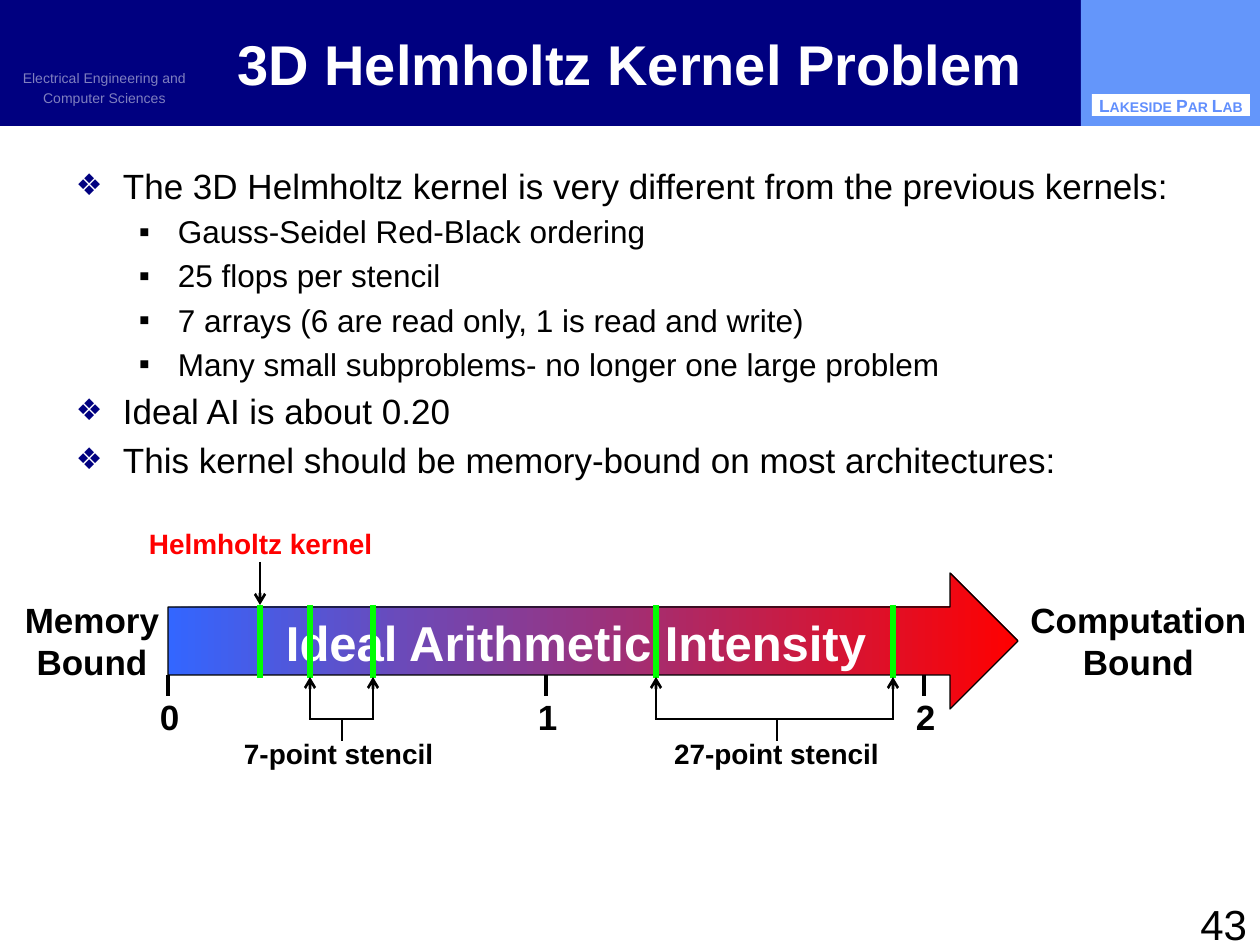
from lxml.etree import SubElement
from pptx import Presentation
from pptx.dml.color import RGBColor
from pptx.enum.shapes import MSO_CONNECTOR, MSO_SHAPE
from pptx.enum.text import MSO_ANCHOR, PP_ALIGN
from pptx.oxml.ns import qn
from pptx.util import Emu, Pt

PX = 914400 / 126
BLACK = RGBColor(0, 0, 0)
WHITE = RGBColor(255, 255, 255)
NAVY = RGBColor(0, 0, 128)
PANEL_BLUE = RGBColor(0x64, 0x96, 0xFA)
LABEL_BLUE = RGBColor(0x61, 0x8F, 0xFD)
ARROW_BLUE = RGBColor(0x33, 0x66, 0xFF)
RED = RGBColor(255, 0, 0)
GREEN = RGBColor(0, 255, 0)
LEFT, CENTER, RIGHT = PP_ALIGN.LEFT, PP_ALIGN.CENTER, PP_ALIGN.RIGHT

prs = Presentation()
prs.slide_width, prs.slide_height = Emu(round(1260 * PX)), Emu(round(945 * PX))
s = prs.slides.add_slide(prs.slide_layouts[6])


def add_text(target, paragraphs, size, color=BLACK, bold=False, align=LEFT,
             anchor=MSO_ANCHOR.TOP, margins=(13, 6), wrap=False, spacing=None, alpha=None):
    """Fill a shape, or a new text box at (x, y, w, h); a paragraph is a list of (text, size, color)
    runs, or a plain string."""
    if isinstance(target, tuple):
        target = s.shapes.add_textbox(*[round(v * PX) for v in target])
    tf = target.text_frame
    tf.word_wrap, tf.vertical_anchor = wrap, anchor
    tf.margin_left = tf.margin_right = round(margins[0] * PX)
    tf.margin_top = tf.margin_bottom = round(margins[1] * PX)
    for i, runs in enumerate(paragraphs):
        p = tf.add_paragraph() if i else tf.paragraphs[0]
        p.alignment, p.line_spacing = align, spacing
        for text, run_size, run_color in [(runs, size, color)] if isinstance(runs, str) else runs:
            r = p.add_run()
            r.text = text
            r.font.name, r.font.size, r.font.bold = "Arial", Pt(run_size), bold
            r.font.color.rgb = run_color
            if alpha:
                rgb = r._r.rPr.find(qn("a:solidFill"))[0]
                SubElement(rgb, qn("a:alpha"), val=str(alpha * 1000))
    return tf


def add_line(x1, y1, x2, y2, color=BLACK, width=1.5, arrow=False):
    c = s.shapes.add_connector(MSO_CONNECTOR.STRAIGHT, *[round(v * PX) for v in (x1, y1, x2, y2)])
    c.line.color.rgb, c.line.width = color, Pt(width)
    if arrow:
        SubElement(c.line._get_or_add_ln(), qn("a:tailEnd"), type="arrow")
    SubElement(c._element.spPr, qn("a:effectLst"))


# Header band
for box, color in [((0, 0, 1260, 126), NAVY), ((1081, 0, 179, 126), PANEL_BLUE),
                   ((1092, 94, 158, 22), WHITE)]:
    sp = s.shapes.add_shape(MSO_SHAPE.RECTANGLE, *[round(v * PX) for v in box])
    sp.shadow.inherit = False
    sp.fill.solid()
    sp.fill.fore_color.rgb = color
    sp.line.fill.background()
add_text(sp, [[(text, size, LABEL_BLUE) for text, size in
               [("L", 10), ("AKESIDE ", 8), ("P", 10), ("AR ", 8), ("L", 10), ("AB", 8)]]],
         10, bold=True, align=CENTER, anchor=MSO_ANCHOR.MIDDLE, margins=(0, 0))
tf = add_text((10, 73, 189, 32), ["Electrical Engineering and", "Computer Sciences"], 8, WHITE,
              align=CENTER, anchor=MSO_ANCHOR.MIDDLE, margins=(0, 0), wrap=True,
              spacing=0.9, alpha=50)
tf.paragraphs[1].space_before = Pt(2.4)
add_text((189, 0, 882, 126), ["3D Helmholtz Kernel Problem"], 32, WHITE, bold=True,
         align=CENTER, anchor=MSO_ANCHOR.MIDDLE, wrap=True)

# Bulleted body: (level, text)
body = [
    (0, "The 3D Helmholtz kernel is very different from the previous kernels:"),
    (1, "Gauss-Seidel Red-Black ordering"),
    (1, "25 flops per stencil"),
    (1, "7 arrays (6 are read only, 1 is read and write)"),
    (1, "Many small subproblems- no longer one large problem"),
    (0, "Ideal AI is about 0.20"),
    (0, "This kernel should be memory-bound on most architectures:"),
]
tf = add_text((63, 158, 1134, 724),
              [[(text, (20, 18)[level], BLACK)] for level, text in body], 20, wrap=True)
for p, (level, _) in zip(tf.paragraphs, body):
    p.level = level
    p.space_before = Pt((4, 3.6)[level])
    pPr = p._p.get_or_add_pPr()
    pPr.set("marL", str(round((47, 102)[level] * PX)))
    pPr.set("indent", str(round((-47, -39)[level] * PX)))
    if level == 0:
        SubElement(SubElement(pPr, qn("a:buClr")), qn("a:srgbClr"), val=str(NAVY))
        SubElement(pPr, qn("a:buSzPct"), val="85000")
    SubElement(pPr, qn("a:buFont"), typeface="Arial")
    SubElement(pPr, qn("a:buChar"), char="❖▪"[level])

add_text((966, 892, 294, 42), ["43"], 24, align=RIGHT, wrap=True)

# Intensity arrow
for box, lines in [((1018, 592, 241, 97), ["Computation", "Bound"]),
                   ((12, 592, 160, 97), ["Memory", "Bound"])]:
    add_text(box, lines, 20, bold=True, align=CENTER, margins=(0, 6))
sp = s.shapes.add_shape(MSO_SHAPE.RIGHT_ARROW, *[round(v * PX) for v in (168, 573, 850, 136)])
sp.shadow.inherit = False
sp.fill.gradient()
sp.fill.gradient_angle = 0
for stop, position, color in zip(sp.fill.gradient_stops, (0, 1), (ARROW_BLUE, RED)):
    stop.position, stop.color.rgb = position, color
sp.line.color.rgb, sp.line.width = BLACK, Pt(0.75)
add_text(sp, ["Ideal Arithmetic Intensity"], 28, WHITE, bold=True, align=CENTER, wrap=True)

# Axis ticks
for value in range(3):
    x = 168 + 378 * value
    add_line(x, 675, x, 696, width=2)
    add_text((x - 21, 689, 45, 55), [str(value)], 20, bold=True)

# Kernel markers
for x in (260, 310, 373, 656, 893):
    add_line(x, 605, x, 678, GREEN, 3)
for left, right, stem, label_box, label in [
        (310, 373, 342, (231, 731, 217, 47), "7-point stencil"),
        (656, 893, 777, (661, 731, 233, 47), "27-point stencil")]:
    for x in (left, right):
        add_line(x, 719, x, 677, arrow=True)
    add_line(left - 1, 719, right + 1, 719)
    add_line(stem, 719, stem, 741)
    add_text(label_box, [label], 16, bold=True)
add_line(260, 562, 260, 605, arrow=True)
add_text((136, 520, 252, 47), ["Helmholtz kernel"], 16, RED, bold=True)

prs.save("out.pptx")
